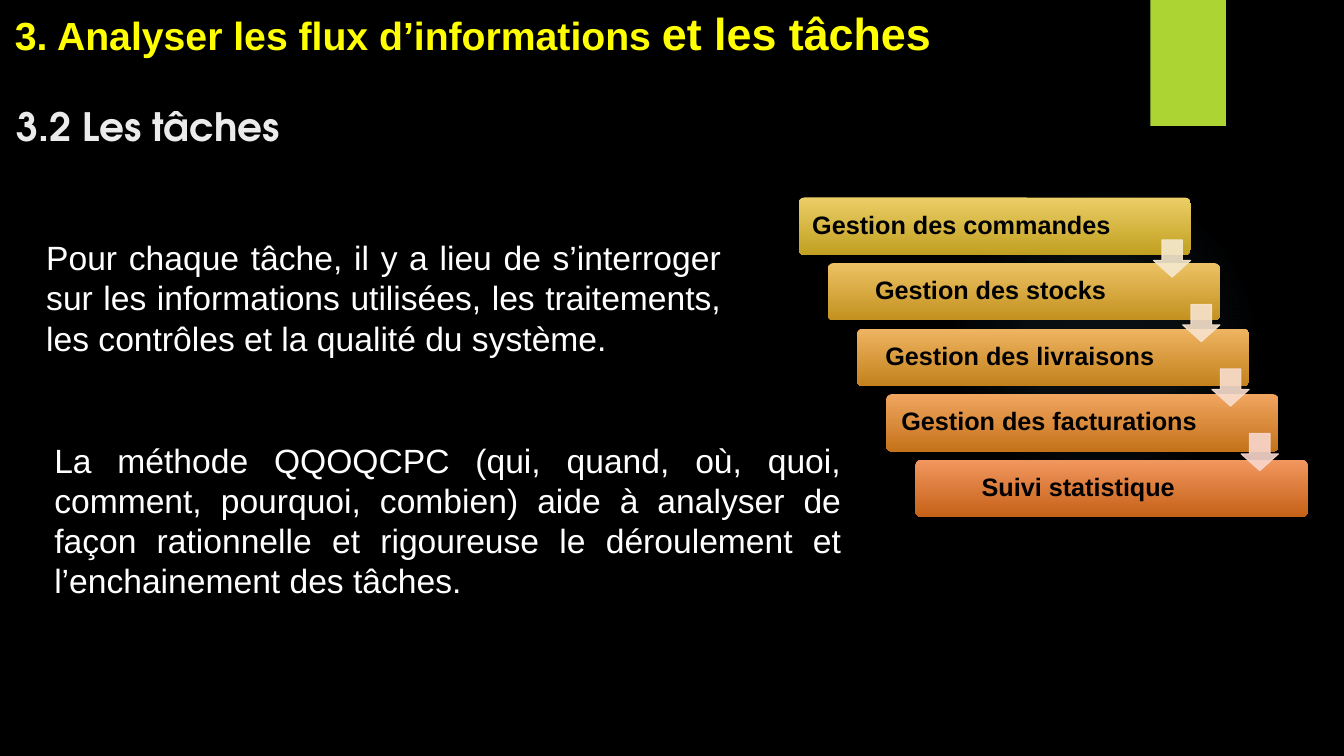
"""Build the slide on analysing tasks, with its staircase of five management steps."""
from lxml.etree import SubElement
from pptx import Presentation
from pptx.dml.color import RGBColor
from pptx.enum.shapes import MSO_SHAPE as Shape
from pptx.enum.text import MSO_ANCHOR as Anchor, PP_ALIGN as Align
from pptx.oxml import parse_xml
from pptx.oxml.ns import nsdecls, qn
from pptx.util import Pt

PX = 9144
SLIDE = (1333, 750)
BLACK, WHITE, YELLOW, PALE, GREEN, BLUE = "000000", "FFFFFF", "FFFF00", "EBEBEB", "ACD433", "7AC4F0"
TITLE = {"size": 28, "name": "Arial", "bold": True, "color": YELLOW}
SUBTITLE = {"size": 27.9, "name": "TeX Gyre Adventor", "bold": True, "color": PALE}
BODY = {"size": 24, "name": "Arial", "color": WHITE}
LABEL = {"size": 18, "name": "Arial", "bold": True, "color": BLACK}

HEADINGS = [
    ((7, 82, 1085, 71), [("3.2 Les tâches", SUBTITLE)]),
    ((5, 14, 1085, 50), [("3. Analyser les flux d’informations ", TITLE),
                         ("et les tâches", {**TITLE, "size": 32})]),
]
PARAGRAPHS = [
    ((36, 230, 689, 131), "Pour chaque tâche, il y a lieu de s’interroger sur les informations utilisées, "
                          "les traitements, les contrôles et la qualité du système."),
    ((44, 431, 800, 172), "La méthode QQOQCPC (qui, quand, où, quoi, comment, pourquoi, combien) aide à "
                          "analyser de façon rationnelle et rigoureuse le déroulement et "
                          "l’enchainement des tâches."),
]
STEPS = [
    ("Gestion des commandes", "EBCE66", "C1A021"),
    ("Gestion des stocks", "EDC264", "C2911F"),
    ("Gestion des livraisons", "EFB462", "C3821C"),
    ("Gestion des facturations", "F1A660", "C4721A"),
    ("Suivi statistique", "F2975F", "C56118"),
]
ARROWS = ["F5E9CE", "F7E3CD", "F8DDCD", "F9D7CD"]
GLOW_STOPS = [(0, 7), (36, 6), (69, 0)]
BAR_LEFT, BAR_TOP, BAR_WIDTH, BAR_HEIGHT = 792, 196, 389, 57
STEP_X, STEP_Y = 29, 65
ARROW_LEFT, ARROW_TOP, ARROW_SIZE, ARROW_STEP = 1144, 238, 37, 64


def rgb(color):
    return RGBColor.from_string(color)


def emu(place):
    return [length * PX for length in place]


def add_text(page, place, spans, anchor=Anchor.TOP, inset=None, **layout):
    box = page.shapes.add_textbox(*emu(place))
    frame = box.text_frame
    frame.word_wrap = True
    frame.vertical_anchor = anchor
    if inset is not None:
        for side in ("left", "top", "right", "bottom"):
            setattr(frame, f"margin_{side}", inset * PX)
    para = frame.paragraphs[0]
    for key, value in layout.items():
        setattr(para, key, value)
    for words, style in spans:
        span = para.add_run()
        span.text = words
        for key, value in style.items():
            if key == "color":
                span.font.color.rgb = rgb(value)
            else:
                setattr(span.font, key, Pt(value) if key == "size" else value)


def add_preset(page, kind, place, color=None, adjustments=()):
    shape = page.shapes.add_shape(kind, *emu(place))
    shape.shadow.inherit = False
    shape.line.fill.background()
    for index, value in enumerate(adjustments):
        shape.adjustments[index] = value
    if color:
        shape.fill.solid()
        shape.fill.fore_color.rgb = rgb(color)
    return shape


def add_glow(page, place):
    glow = add_preset(page, Shape.OVAL, place, BLUE)
    stops = "".join(
        f'<a:gs pos="{position * 1000}"><a:srgbClr val="{BLUE}">'
        f'<a:alpha val="{alpha * 1000}"/></a:srgbClr></a:gs>' for position, alpha in GLOW_STOPS)
    gradient = parse_xml(
        f'<a:gradFill {nsdecls("a")}><a:gsLst>{stops}</a:gsLst><a:path path="circle">'
        '<a:fillToRect l="50000" t="50000" r="50000" b="50000"/></a:path></a:gradFill>')
    properties = glow.element.spPr
    properties.replace(properties.find(qn("a:solidFill")), gradient)


def add_step(page, index, words, top_color, bottom_color):
    left, top = BAR_LEFT + index * STEP_X, BAR_TOP + index * STEP_Y
    bar = add_preset(page, Shape.ROUNDED_RECTANGLE, (left, top, BAR_WIDTH, BAR_HEIGHT), adjustments=[0.1])
    bar.fill.gradient()
    bar.fill.gradient_angle = 270
    for stop, color in zip(bar.fill.gradient_stops, (top_color, bottom_color)):
        stop.color.rgb = rgb(color)
    add_text(page, (left + 2, top + 2, 319, 53), [(words, LABEL)], Anchor.MIDDLE, 7,
             alignment=Align.CENTER, line_spacing=0.9)


def add_arrow(page, index, color):
    place = (ARROW_LEFT + index * STEP_X, ARROW_TOP + index * ARROW_STEP, ARROW_SIZE, ARROW_SIZE)
    arrow = add_preset(page, Shape.DOWN_ARROW, place, color, [0.55, 0.45])
    arrow.line.color.rgb = rgb(color)
    arrow.line.width = Pt(0.75)
    for tint in arrow.element.spPr.iter(qn("a:srgbClr")):
        SubElement(tint, qn("a:alpha"), val="90000")


def main():
    deck = Presentation()
    deck.slide_width, deck.slide_height = emu(SLIDE)
    page = deck.slides.add_slide(deck.slide_layouts[6])
    page.background.fill.solid()
    page.background.fill.fore_color.rgb = rgb(BLACK)
    add_glow(page, (941, 183, 308, 308))
    add_preset(page, Shape.RECTANGLE, (1141, 0, 75, 125), GREEN)
    for index, step in enumerate(STEPS):
        add_step(page, index, *step)
    for index, color in enumerate(ARROWS):
        add_arrow(page, index, color)
    for place, spans in HEADINGS:
        add_text(page, place, spans, Anchor.BOTTOM, line_spacing=1.5)
    for place, words in PARAGRAPHS:
        add_text(page, place, [(words, BODY)], alignment=Align.JUSTIFY)
    deck.save("out.pptx")


if __name__ == "__main__":
    main()
